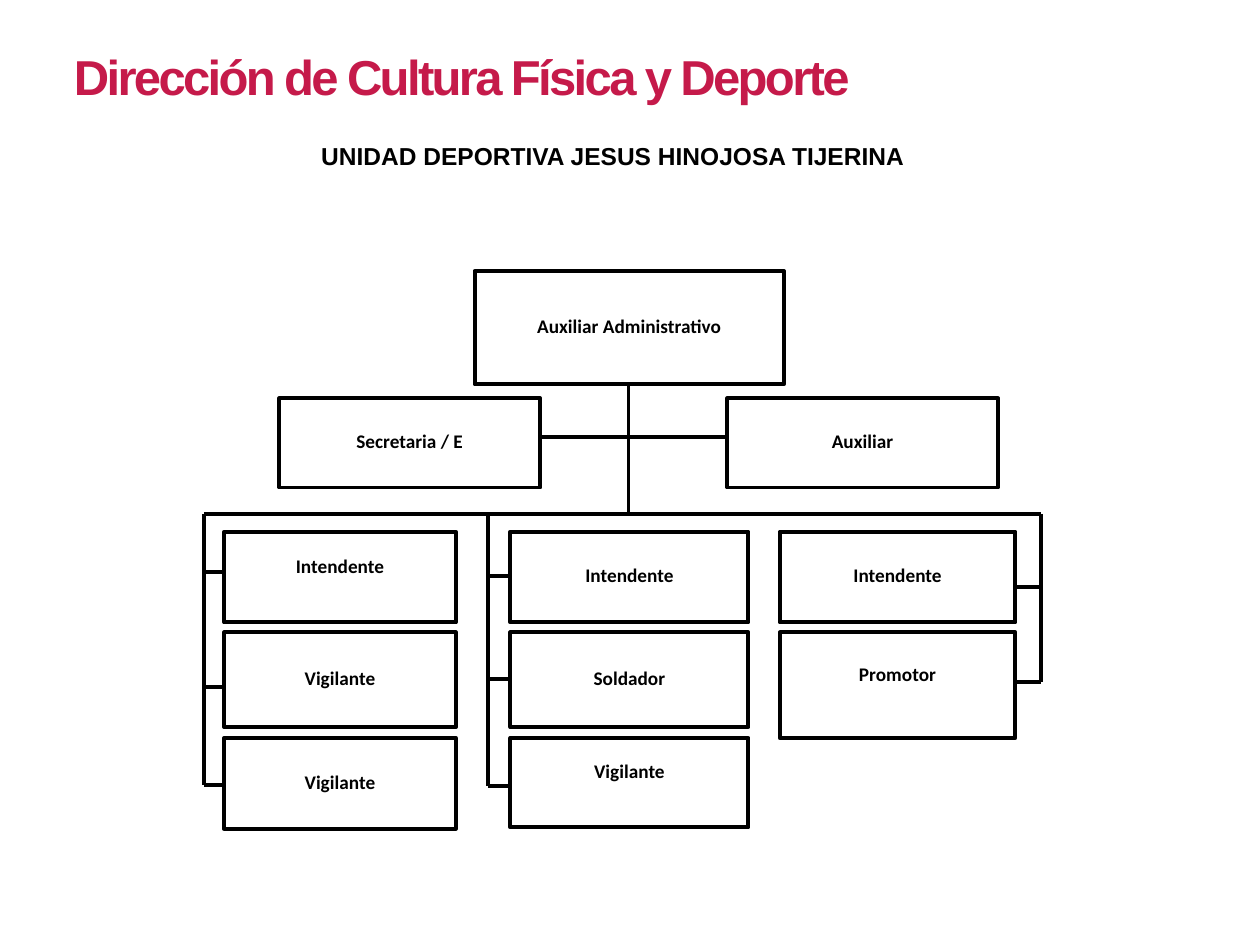
"""Build the organisation chart of a municipal sports centre."""
from dataclasses import dataclass

from lxml import etree
from pptx import Presentation
from pptx.dml.color import RGBColor
from pptx.enum.shapes import MSO_CONNECTOR, MSO_SHAPE
from pptx.enum.text import MSO_ANCHOR, MSO_AUTO_SIZE, PP_ALIGN
from pptx.oxml.ns import qn
from pptx.util import Cm, Pt

STRAIGHT = MSO_CONNECTOR.STRAIGHT
RECTANGLE = MSO_SHAPE.RECTANGLE
MIDDLE = MSO_ANCHOR.MIDDLE
GROW = MSO_AUTO_SIZE.SHAPE_TO_FIT_TEXT
LEFT, CENTER = PP_ALIGN.LEFT, PP_ALIGN.CENTER


@dataclass(frozen=True)
class Theme:
    accent: RGBColor = RGBColor(0xC5, 0x1A, 0x4A)
    ink: RGBColor = RGBColor(0, 0, 0)
    paper: RGBColor = RGBColor(255, 255, 255)
    heading_font: str = "Arial"
    box_font: str = "Calibri"
    title_size: float = 28
    subtitle_size: float = 14
    box_size: float = 11
    line_width: float = 2.25
    title_tracking: int = -150


@dataclass(frozen=True)
class Post:
    label: str
    left: float
    top: float
    width: float
    height: float
    raised: bool = False


@dataclass(frozen=True)
class Branch:
    trunk: float
    stub_end: float
    stubs: tuple[float, ...]


THEME = Theme()
BUS_Y = 10.36
ROW_TOPS = (10.72, 12.75, 14.88)
STAFF_X = 12.67
ASSISTANT_Y = 8.81

BRANCHES = (
    Branch(4.11, 4.83, (11.53, 13.84, 15.82)),
    Branch(9.83, 10.5, (11.62, 13.69, 15.85)),
    Branch(20.98, 20.2, (11.84, 13.74)),
)
LEADERS = (
    Post("Auxiliar Administrativo", 9.57, 5.46, 6.23, 2.29),
    Post("Secretaria / E", 5.63, 8.03, 5.26, 1.8),
    Post("Auxiliar", 14.66, 8.03, 5.46, 1.8),
)
COLUMNS = (
    (4.52, 4.67, (("Intendente", 1.83, True), ("Vigilante", 1.91, False),
                  ("Vigilante", 1.83, False))),
    (10.29, 4.8, (("Intendente", 1.83, False), ("Soldador", 1.91, False),
                  ("Vigilante", 1.8, True))),
    (15.72, 4.75, (("Intendente", 1.83, False), ("Promotor", 2.13, True))),
)


def style_text(frame, font: str, size: float, color: RGBColor, align) -> None:
    para = frame.paragraphs[0]
    para.alignment = align
    span = para.runs[0]
    span.font.name = font
    span.font.size = Pt(size)
    span.font.bold = True
    span.font.color.rgb = color


def add_heading(page, text: str, left: float, top: float, width: float, height: float,
                size: float, color: RGBColor, align, wrap: bool):
    box = page.shapes.add_textbox(Cm(left), Cm(top), Cm(width), Cm(height))
    frame = box.text_frame
    frame.text = text
    frame.word_wrap = wrap
    frame.auto_size = GROW
    style_text(frame, THEME.heading_font, size, color, align)
    return frame.paragraphs[0].runs[0]


def add_line(page, x1: float, y1: float, x2: float, y2: float) -> None:
    line = page.shapes.add_connector(STRAIGHT, Cm(x1), Cm(y1), Cm(x2), Cm(y2))
    line.line.color.rgb = THEME.ink
    line.line.width = Pt(THEME.line_width)
    etree.SubElement(line._element.spPr, qn("a:effectLst"))


def add_branch(page, branch: Branch) -> None:
    add_line(page, branch.trunk, BUS_Y, branch.trunk, branch.stubs[-1])
    for y in branch.stubs:
        add_line(page, branch.trunk, y, branch.stub_end, y)


def add_post(page, post: Post) -> None:
    box = page.shapes.add_shape(
        RECTANGLE, Cm(post.left), Cm(post.top), Cm(post.width), Cm(post.height))
    box.shadow.inherit = False
    box.fill.solid()
    box.fill.fore_color.rgb = THEME.paper
    box.line.color.rgb = THEME.ink
    box.line.width = Pt(THEME.line_width)
    frame = box.text_frame
    frame.text = post.label
    frame.word_wrap = False
    frame.vertical_anchor = MIDDLE
    if post.raised:
        frame.margin_bottom = Cm(0.5)
    style_text(frame, THEME.box_font, THEME.box_size, THEME.ink, CENTER)
    frame.paragraphs[0].line_spacing = 0.8


def main() -> None:
    deck = Presentation()
    deck.slide_width, deck.slide_height = Cm(25.4), Cm(19.05)
    page = deck.slides.add_slide(deck.slide_layouts[6])

    title = add_heading(page, "Dirección de Cultura Física y Deporte", 1.24, 0.81, 17.3,
                        1.45, THEME.title_size, THEME.accent, LEFT, True)
    title.font._element.set("spc", str(THEME.title_tracking))
    add_heading(page, "UNIDAD DEPORTIVA JESUS HINOJOSA TIJERINA", 6.17, 2.72, 12.37,
                0.86, THEME.subtitle_size, THEME.ink, CENTER, False)

    add_line(page, STAFF_X, 6.45, STAFF_X, BUS_Y)
    add_line(page, 8.61, ASSISTANT_Y, 14.68, ASSISTANT_Y)
    add_line(page, BRANCHES[0].trunk, BUS_Y, BRANCHES[-1].trunk, BUS_Y)
    for branch in BRANCHES:
        add_branch(page, branch)

    for post in LEADERS:
        add_post(page, post)
    for left, width, members in COLUMNS:
        for top, (label, height, raised) in zip(ROW_TOPS, members):
            add_post(page, Post(label, left, top, width, height, raised))

    deck.save("out.pptx")


if __name__ == "__main__":
    main()
